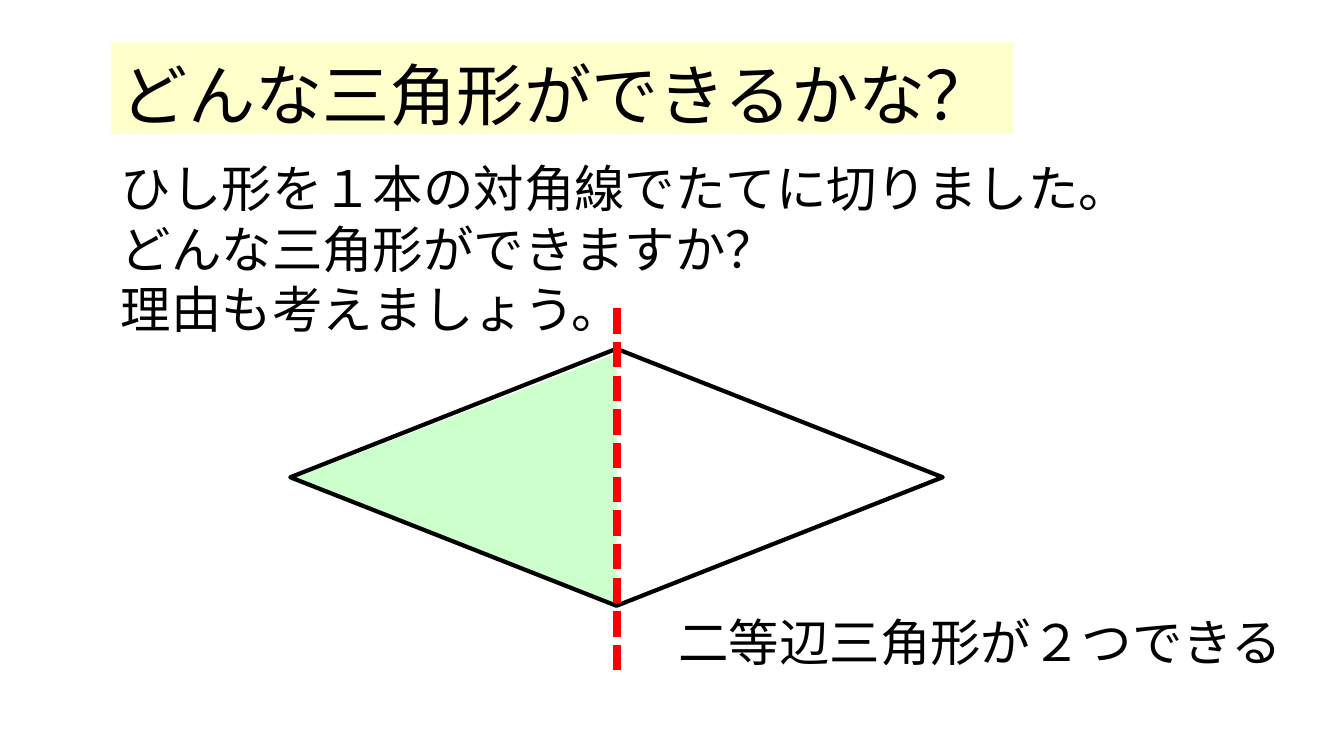
from dataclasses import dataclass
from typing import Optional

from pptx import Presentation
from pptx.dml.color import RGBColor
from pptx.enum.dml import MSO_LINE
from pptx.enum.shapes import MSO_CONNECTOR, MSO_SHAPE
from pptx.enum.text import MSO_ANCHOR, PP_ALIGN
from pptx.oxml.ns import qn
from pptx.util import Emu, Pt

PX = 9144  # 100 px to the inch
FONT = "Noto Sans CJK JP"
BLACK = RGBColor(0x00, 0x00, 0x00)
RED = RGBColor(0xFF, 0x00, 0x00)
CREAM = RGBColor(0xFF, 0xFF, 0xCC)
MINT = RGBColor(0xCC, 0xFF, 0xCC)


@dataclass(frozen=True)
class Figure:
    kind: MSO_SHAPE
    box: tuple[int, int, int, int]
    fill: Optional[RGBColor] = None
    line: Optional[RGBColor] = None
    rotation: int = 0


@dataclass(frozen=True)
class Caption:
    box: tuple[int, int, int, int]
    size: int
    lines: tuple[str, ...]


def px(n: int) -> Emu:
    return Emu(n * PX)


def add_figure(slide, fig: Figure):
    sp = slide.shapes.add_shape(fig.kind, *map(px, fig.box))
    sp.shadow.inherit = False
    sp.rotation = fig.rotation
    if fig.fill is None:
        sp.fill.background()
    else:
        sp.fill.solid()
        sp.fill.fore_color.rgb = fig.fill
    if fig.line is None:
        sp.line.fill.background()
    else:
        sp.line.color.rgb = fig.line
        sp.line.width = Pt(3)
    return sp


def write(sp, caption: Caption) -> None:
    tf = sp.text_frame
    tf.word_wrap = True
    tf.vertical_anchor = MSO_ANCHOR.TOP
    tf.margin_left = tf.margin_right = px(10)
    tf.margin_top, tf.margin_bottom = px(11), px(0)
    for i, line in enumerate(caption.lines):
        p = tf.paragraphs[0] if i == 0 else tf.add_paragraph()
        p.alignment = PP_ALIGN.LEFT
        p.line_spacing = Pt(caption.size * 1.2)
        r = p.add_run()
        r.text = line
        r.font.size = Pt(caption.size)
        r.font.name = FONT
        r.font.color.rgb = BLACK
        # East Asian typeface
        ea = r.font._element.makeelement(qn("a:ea"), {"typeface": FONT})
        r.font._element.find(qn("a:latin")).addnext(ea)


def add_caption(slide, caption: Caption) -> None:
    write(slide.shapes.add_textbox(*map(px, caption.box)), caption)


def add_cut(slide, x: int, top: int, bottom: int) -> None:
    cut = slide.shapes.add_connector(
        MSO_CONNECTOR.STRAIGHT, px(x), px(top), px(x), px(bottom))
    cut.line.color.rgb = RED
    cut.line.width = Pt(6)
    cut.line.dash_style = MSO_LINE.SQUARE_DOT
    sp_pr = cut._element.spPr
    sp_pr.append(sp_pr.makeelement(qn("a:effectLst"), {}))


TITLE = Caption((110, 42, 895, 91), 48, ("どんな三角形ができるかな？",))
ANSWER = Caption((663, 595, 626, 71), 36, ("二等辺三角形が２つできる",))
QUESTION = Caption((110, 145, 1030, 192), 36, (
    "ひし形を１本の対角線でたてに切りました。",
    "どんな三角形ができますか？",
    "理由も考えましょう。",
))
HALF = Figure(MSO_SHAPE.ISOSCELES_TRIANGLE, (324, 314, 251, 324),
              fill=MINT, rotation=270)
BANNER = Figure(MSO_SHAPE.RECTANGLE, TITLE.box, fill=CREAM)
RHOMBUS = Figure(MSO_SHAPE.DIAMOND, (288, 346, 647, 255), line=BLACK)


def main() -> None:
    prs = Presentation()
    prs.slide_width, prs.slide_height = px(1333), px(750)
    slide = prs.slides.add_slide(prs.slide_layouts[6])

    # Shaded half and title banner
    add_figure(slide, HALF)
    write(add_figure(slide, BANNER), TITLE)

    # Rhombus, answer and the cut along the diagonal
    add_figure(slide, RHOMBUS)
    add_caption(slide, ANSWER)
    add_cut(slide, 612, 306, 665)

    # Question
    add_caption(slide, QUESTION)
    prs.save("out.pptx")


if __name__ == "__main__":
    main()
